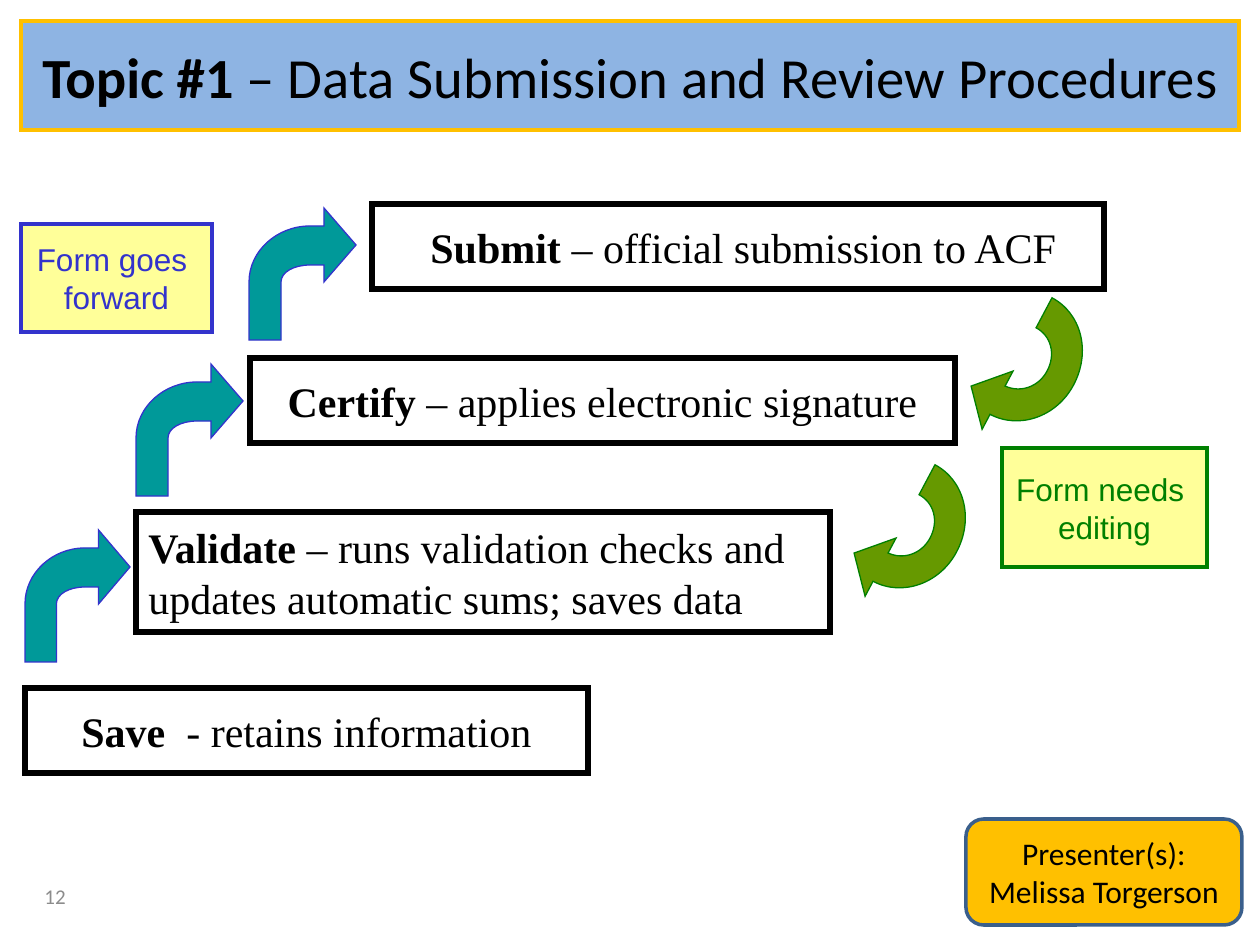
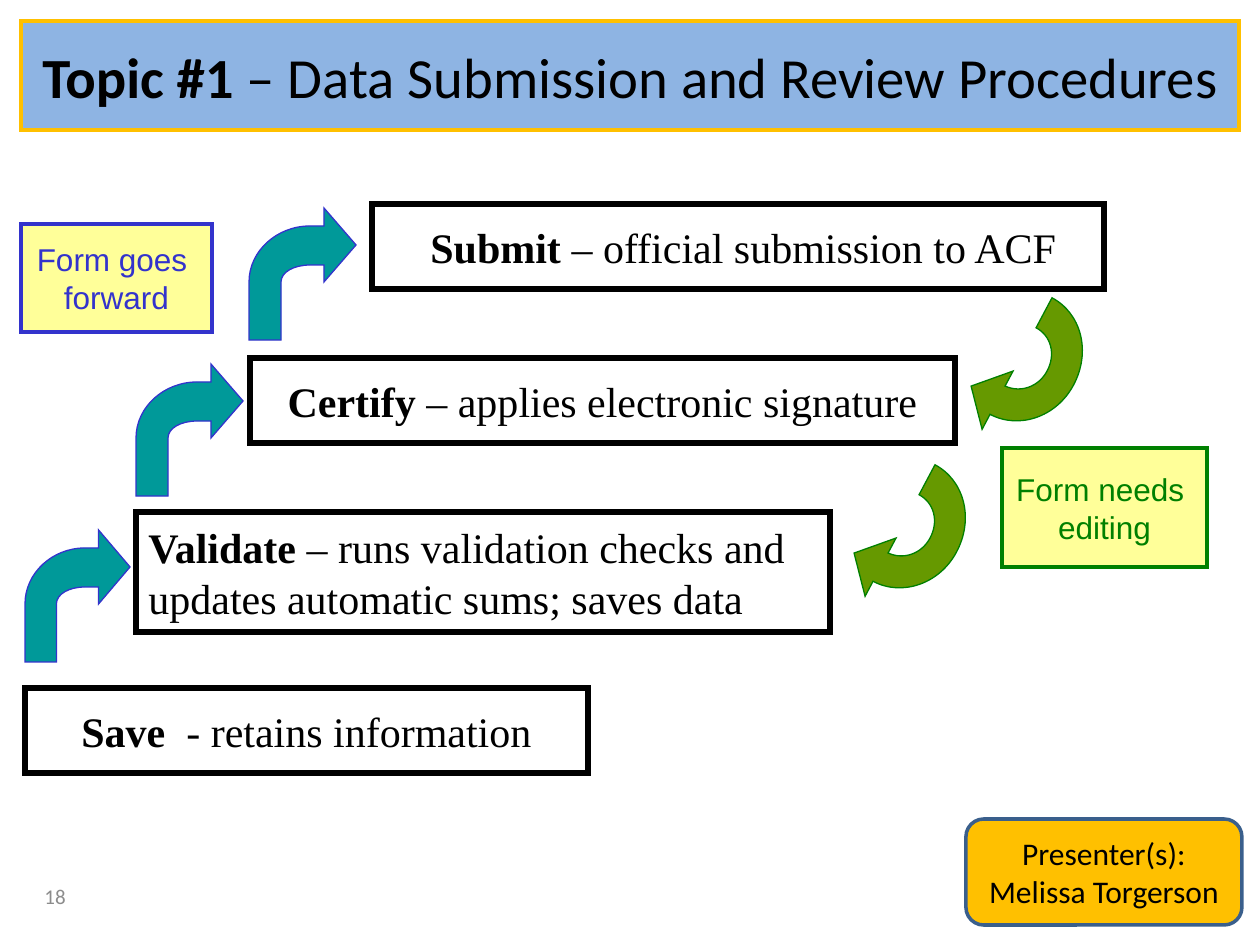
from dataclasses import dataclass

from lxml import etree
from pptx import Presentation
from pptx import util as u
from pptx.dml.color import RGBColor
from pptx.enum import shapes, text
from pptx.oxml import ns

PX = u.Inches(1) / 126  # EMU in one px

BLACK = RGBColor(0x00, 0x00, 0x00)
BAND_BLUE = RGBColor(0x8E, 0xB4, 0xE3)
GOLD = RGBColor(0xFF, 0xC0, 0x00)
BADGE_EDGE = RGBColor(0x3A, 0x5F, 0x8C)
NOTE_YELLOW = RGBColor(0xFF, 0xFF, 0x99)
TEAL = RGBColor(0x00, 0x99, 0x99)
FORWARD_BLUE = RGBColor(0x33, 0x33, 0xCC)
OLIVE = RGBColor(0x66, 0x99, 0x00)
EDIT_GREEN = RGBColor(0x00, 0x80, 0x00)
NUMBER_GREY = RGBColor(0x8C, 0x8C, 0x8C)

CENTER, LEFT = text.PP_ALIGN.CENTER, text.PP_ALIGN.LEFT
RECT = shapes.MSO_SHAPE.RECTANGLE
ROUNDED = shapes.MSO_SHAPE.ROUNDED_RECTANGLE


@dataclass(frozen=True)
class TextStyle:
    font: str
    size: float
    color: RGBColor
    align: text.PP_ALIGN = CENTER
    wrap: bool = True


@dataclass(frozen=True)
class Box:
    at: tuple[int, int, int, int]
    lines: list[list[tuple[str, bool]]]  # paragraphs of (words, bold)
    style: TextStyle
    edge: RGBColor
    edge_width: float
    fill: RGBColor | None = None
    preset: shapes.MSO_SHAPE = RECT


@dataclass(frozen=True)
class ArrowStyle:
    frame: tuple[int, int]  # size of the outline's own grid
    outline: list[tuple[int, ...]]  # a pair is a corner, six numbers a curve
    fill: RGBColor
    edge: RGBColor
    rotation: int = 0


@dataclass(frozen=True)
class Arrow:
    at: tuple[int, int, int, int]
    style: ArrowStyle


FORWARD = ArrowStyle((107, 132), [
    (107, 37), (75, 0), (75, 18), (61, 18), (28, 18, 0, 43, 0, 74),
    (0, 132), (32, 132), (32, 74), (32, 64, 45, 57, 61, 57), (75, 57), (75, 74),
], TEAL, FORWARD_BLUE)
RETURN = ArrowStyle((132, 120), [
    (100, 60), (99, 43, 85, 30, 67, 30), (48, 30, 34, 43, 34, 60), (0, 60),
    (0, 27, 29, 0, 67, 0), (103, 0, 132, 27, 132, 60),
    (149, 60), (116, 90), (83, 60),
], OLIVE, EDIT_GREEN, rotation=118)

TITLE_STYLE = TextStyle("Calibri", 32.4, BLACK)
STEP_STYLE = TextStyle("Times New Roman", 24, BLACK, wrap=False)
VALIDATE_STYLE = TextStyle("Times New Roman", 24, BLACK, align=LEFT)
FORWARD_STYLE = TextStyle("Arial", 18, FORWARD_BLUE, wrap=False)
EDIT_STYLE = TextStyle("Arial", 18, EDIT_GREEN, wrap=False)
BADGE_STYLE = TextStyle("Calibri", 18, BLACK)
NUMBER_STYLE = TextStyle("Calibri", 12, NUMBER_GREY, align=LEFT)

TITLE = Box((21, 21, 1218, 109),
            [[("Topic #1", True), (" – Data Submission and Review Procedures", False)]],
            TITLE_STYLE, GOLD, 2.25, BAND_BLUE)

# The grouped diagram, from back to front
DIAGRAM = [
    # Steps of the procedure, from bottom to top
    Box((25, 688, 563, 85), [[("Save ", True), (" - retains information", False)]],
        STEP_STYLE, BLACK, 3),
    Box((136, 512, 694, 120),
        [[("Validate ", True),
          ("– runs validation checks and updates automatic sums; saves data", False)]],
        VALIDATE_STYLE, BLACK, 3),
    Box((250, 358, 705, 85),
        [[("Certify ", True), ("– applies electronic signature", False)]],
        STEP_STYLE, BLACK, 3),
    Box((372, 204, 732, 85),
        [[(" Submit ", True), ("– official submission to ACF", False)]],
        STEP_STYLE, BLACK, 3),
    Arrow((25, 530, 105, 132), FORWARD),
    Arrow((136, 364, 107, 132), FORWARD),
    Arrow((955, 296, 132, 120), RETURN),
    # Notes on the two directions
    Box((21, 224, 191, 108), [[("Form goes ", False)], [("forward", False)]],
        FORWARD_STYLE, FORWARD_BLUE, 2.25, NOTE_YELLOW),
    Box((1002, 448, 205, 119), [[("Form needs ", False)], [("editing", False)]],
        EDIT_STYLE, EDIT_GREEN, 2.25, NOTE_YELLOW),
]

LOOSE_ARROWS = [
    Arrow((249, 208, 107, 132), FORWARD),
    Arrow((838, 463, 132, 120), RETURN),
]

BADGE = Box((966, 819, 276, 106),
            [[("Presenter(s):", False)], [("Melissa Torgerson", False)]],
            BADGE_STYLE, BADGE_EDGE, 2, GOLD, ROUNDED)

NUMBER_AT = (32, 871, 294, 50)
SLIDE_NUMBERS = [12, 18]


def emu(px: float) -> int:
    return round(px * PX)


def set_all(target, values: dict) -> None:
    for name, value in values.items():
        setattr(target, name, value)


def place(shape, at: tuple[int, int, int, int]) -> None:
    set_all(shape, dict(zip(("left", "top", "width", "height"), map(emu, at))))


def write(shape, lines: list[list[tuple[str, bool]]], style: TextStyle) -> None:
    frame = shape.text_frame
    set_all(frame, {"word_wrap": style.wrap, "auto_size": text.MSO_AUTO_SIZE.NONE,
                    "vertical_anchor": text.MSO_ANCHOR.MIDDLE})
    for index, line in enumerate(lines):
        paragraph = frame.add_paragraph() if index else frame.paragraphs[0]
        paragraph.alignment = style.align
        for words, bold in line:
            run = paragraph.add_run()
            run.text = words
            set_all(run.font, {"name": style.font, "size": u.Pt(style.size), "bold": bold})
            run.font.color.rgb = style.color


def paint(shape, fill: RGBColor | None, edge: RGBColor, width: float) -> None:
    if fill is None:
        shape.fill.background()
    else:
        shape.fill.solid()
        shape.fill.fore_color.rgb = fill
    shape.line.color.rgb = edge
    shape.line.width = u.Pt(width)
    # Sharp corners
    outline = shape.element.spPr.find(ns.qn("a:ln"))
    etree.SubElement(outline, ns.qn("a:miter"), lim="800000")


def fill_box(shape, box: Box) -> None:
    paint(shape, box.fill, box.edge, box.edge_width)
    write(shape, box.lines, box.style)


def draw_title(slide, box: Box) -> None:
    place(slide.shapes.title, box.at)
    fill_box(slide.shapes.title, box)


def draw_box(canvas, box: Box) -> None:
    shape = canvas.add_shape(box.preset, *map(emu, box.at))
    shape.shadow.inherit = False
    fill_box(shape, box)


def bend(path, outline: list[tuple[int, ...]]) -> None:
    """Turn the straight segments that stand for curves into curves."""
    for segment, part in zip(list(path), outline):
        if len(part) == 6:
            curve = etree.Element(ns.qn("a:cubicBezTo"))
            for x, y in zip(part[::2], part[1::2]):
                etree.SubElement(curve, ns.qn("a:pt"), x=str(x), y=str(y))
            path.replace(segment, curve)


def draw_arrow(canvas, arrow: Arrow) -> None:
    style = arrow.style
    start, *rest = [part[-2:] for part in style.outline]
    builder = canvas.build_freeform(*start, scale=PX)
    builder.add_line_segments(rest, close=True)
    shape = builder.convert_to_shape()
    path = next(shape.element.iter(ns.qn("a:path")))
    bend(path, style.outline)
    for side, length in zip("wh", style.frame):
        path.set(side, str(length))
    place(shape, arrow.at)
    shape.rotation = style.rotation
    shape.shadow.inherit = False
    paint(shape, style.fill, style.edge, 0.75)


def draw_number(canvas, number: int) -> None:
    corner = canvas.add_textbox(*map(emu, NUMBER_AT))
    write(corner, [[(str(number), False)]], NUMBER_STYLE)


def draw_parts(canvas, parts: list[Box | Arrow]) -> None:
    for part in parts:
        draw = draw_box if isinstance(part, Box) else draw_arrow
        draw(canvas, part)


def main() -> None:
    deck = Presentation()
    deck.slide_width, deck.slide_height = u.Inches(10), u.Inches(7.5)
    title_only = deck.slide_layouts[5]
    for number in SLIDE_NUMBERS:
        slide = deck.slides.add_slide(title_only)
        draw_title(slide, TITLE)
        draw_parts(slide.shapes.add_group_shape().shapes, DIAGRAM)
        draw_number(slide.shapes, number)
        draw_parts(slide.shapes, [*LOOSE_ARROWS, BADGE])
    deck.save("out.pptx")


if __name__ == "__main__":
    main()
